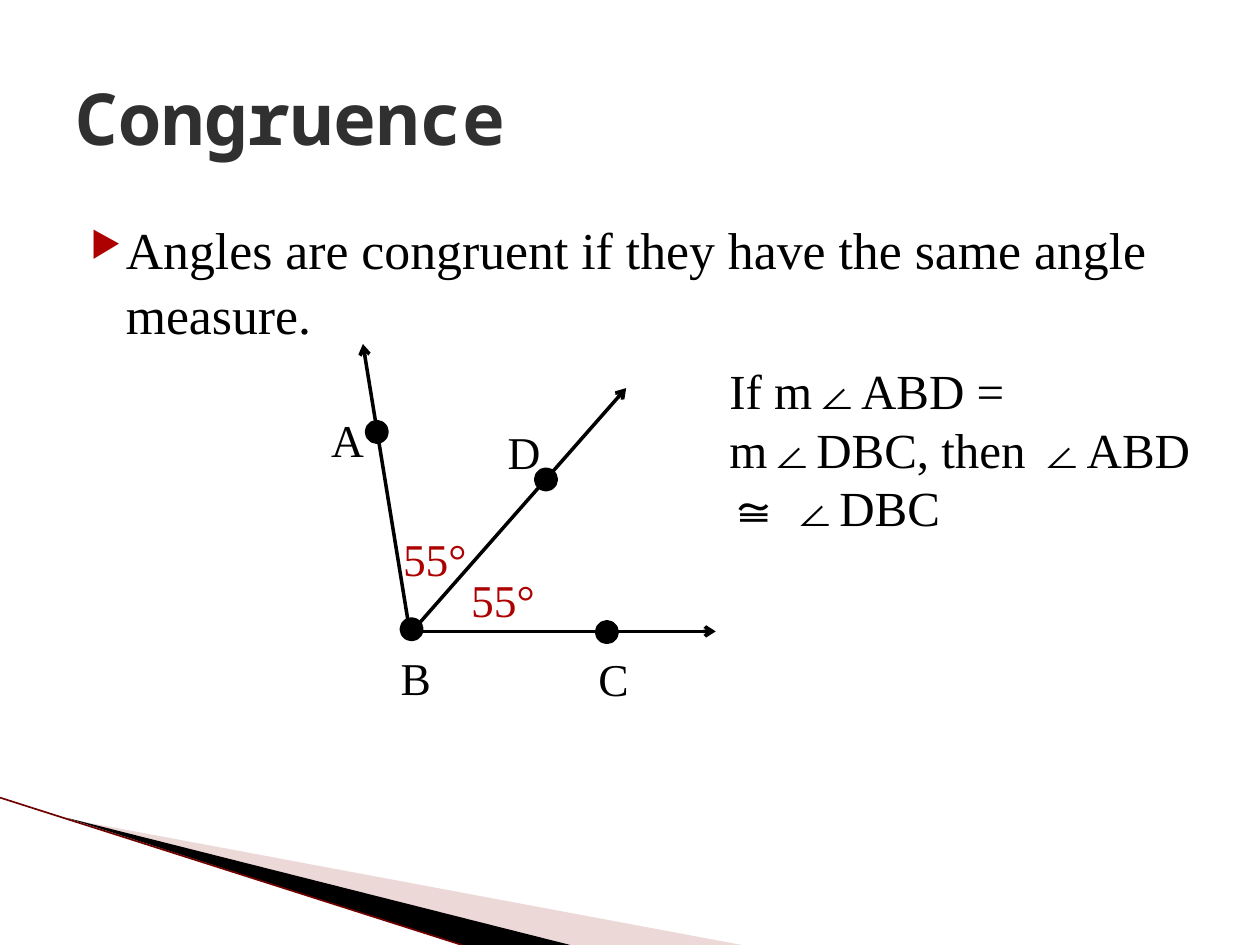
from dataclasses import dataclass

from lxml import etree
from pptx import Presentation
from pptx.dml.color import RGBColor
from pptx.enum.shapes import MSO_CONNECTOR, MSO_SHAPE
from pptx.enum.text import MSO_ANCHOR, PP_ALIGN
from pptx.oxml.ns import qn
from pptx.util import Pt

STRAIGHT = MSO_CONNECTOR.STRAIGHT
OVAL = MSO_SHAPE.OVAL
MIDDLE = MSO_ANCHOR.MIDDLE
LEFT = PP_ALIGN.LEFT


@dataclass(frozen=True)
class Theme:
    ink: str = "000000"
    accent: str = "AD0101"
    heading: str = "303030"
    blush: str = "D29E9E"
    edge: str = "6E0000"
    title_font: str = "Noto Sans Mono"
    body_font: str = "Times New Roman"
    title_size: float = 41
    body_size: float = 29.6
    note_size: float = 28
    label_size: float = 26


THEME = Theme()

TITLE = "Congruence"
DEFINITION = "Angles are congruent if they have the same angle measure."
CONCLUSION = "If m∠ABD = m∠DBC, then ∠ABD ≅ ∠DBC"

# Ray start and arrow tip, in points
RAYS = [
    ((235.5, 360.8), (357.8, 221.8)),
    ((235.5, 360.8), (409, 360.8)),
    ((233.3, 355.7), (207.4, 196.6)),
]
# Name, centre of the dot, top left of the label
POINTS = [
    ("A", (215.3, 246.8), (182.2, 231.8)),
    ("B", (235.2, 359.6), (221.8, 367.9)),
    ("C", (346.8, 361.2), (334.8, 368.6)),
    ("D", (312, 274), (283, 239)),
]
MEASURES = [("55°", (223.2, 300.2)), ("55°", (262.1, 323.3))]

# Corner decoration: outline, colour, opacity in percent
WEDGES = [
    ([(38, 467.8), (424, 540), (326, 540)], THEME.blush, 40),
    ([(38, 467.3), (326, 540), (264, 540)], THEME.ink, 100),
]
EDGE = ((0, 455.8), (264, 540))

DOT = 9.4
DOT_OUTLINE = 4.33
LABEL_HEIGHT = 38.9
LETTER_WIDTH = 25.9
MEASURE_WIDTH = 59


def rgb(colour):
    return RGBColor.from_string(colour)


def write(paragraph, text, font, size, colour, bold=False):
    run = paragraph.add_run()
    run.text = text
    run.font.name = font
    run.font.size = Pt(size)
    run.font.bold = bold
    run.font.color.rgb = rgb(colour)


def add_text(slide, text, box, size, colour=THEME.ink):
    frame = slide.shapes.add_textbox(*map(Pt, box)).text_frame
    frame.word_wrap = True
    paragraph = frame.paragraphs[0]
    write(paragraph, text, THEME.body_font, size, colour)
    return paragraph


def add_line(slide, start, end, colour, width, arrow=False):
    line = slide.shapes.add_connector(STRAIGHT, *map(Pt, start + end))
    line.line.color.rgb = rgb(colour)
    line.line.width = Pt(width)
    if arrow:
        etree.SubElement(line.line._get_or_add_ln(), qn("a:tailEnd"), type="arrow")
    etree.SubElement(line._element.spPr, qn("a:effectLst"))


def add_wedge(slide, outline, colour, opacity):
    corners = [tuple(map(Pt, corner)) for corner in outline]
    builder = slide.shapes.build_freeform(*corners[0])
    builder.add_line_segments(corners[1:], close=True)
    wedge = builder.convert_to_shape()
    wedge.shadow.inherit = False
    wedge.fill.solid()
    wedge.fill.fore_color.rgb = rgb(colour)
    wedge.line.fill.background()
    if opacity < 100:
        tint = wedge._element.spPr.find(".//" + qn("a:srgbClr"))
        etree.SubElement(tint, qn("a:alpha"), val=str(opacity * 1000))


def add_dot(slide, centre):
    x, y = centre
    dot = slide.shapes.add_shape(
        OVAL, Pt(x - DOT / 2), Pt(y - DOT / 2), Pt(DOT), Pt(DOT))
    dot.shadow.inherit = False
    dot.fill.solid()
    dot.fill.fore_color.rgb = rgb(THEME.ink)
    dot.line.color.rgb = rgb(THEME.ink)
    dot.line.width = Pt(DOT_OUTLINE)


def add_bullet(paragraph):
    properties = paragraph._p.get_or_add_pPr()
    properties.set("marL", str(Pt(28.8)))
    properties.set("indent", str(Pt(-20.2)))
    colour = etree.SubElement(properties, qn("a:buClr"))
    etree.SubElement(colour, qn("a:srgbClr"), val=THEME.accent)
    etree.SubElement(properties, qn("a:buSzPct"), val="68000")
    etree.SubElement(properties, qn("a:buChar"), char="▶")


def add_title(slide):
    title = slide.shapes.title
    title.left, title.top, title.width, title.height = map(Pt, (36, 21.6, 648, 90))
    title.text_frame.vertical_anchor = MIDDLE
    paragraph = title.text_frame.paragraphs[0]
    paragraph.alignment = LEFT
    write(paragraph, TITLE, THEME.title_font, THEME.title_size, THEME.heading, True)


def main():
    deck = Presentation()
    deck.slide_width, deck.slide_height = Pt(720), Pt(540)
    slide = deck.slides.add_slide(deck.slide_layouts[5])

    for outline, colour, opacity in WEDGES:
        add_wedge(slide, outline, colour, opacity)
    add_line(slide, *EDGE, THEME.edge, 0.95)

    add_title(slide)
    definition = add_text(slide, DEFINITION, (36, 119.6, 648, 80), THEME.body_size)
    definition.line_spacing = 1.04
    add_bullet(definition)

    for start, tip in RAYS:
        add_line(slide, start, tip, THEME.ink, 2, arrow=True)
    for name, centre, corner in POINTS:
        add_dot(slide, centre)
        add_text(slide, name, (*corner, LETTER_WIDTH, LABEL_HEIGHT), THEME.label_size)
    for measure, corner in MEASURES:
        add_text(slide, measure, (*corner, MEASURE_WIDTH, LABEL_HEIGHT),
                 THEME.label_size, THEME.accent)
    add_text(slide, CONCLUSION, (409.7, 202.3, 279.4, 110), THEME.note_size)

    deck.save("out.pptx")


if __name__ == "__main__":
    main()
